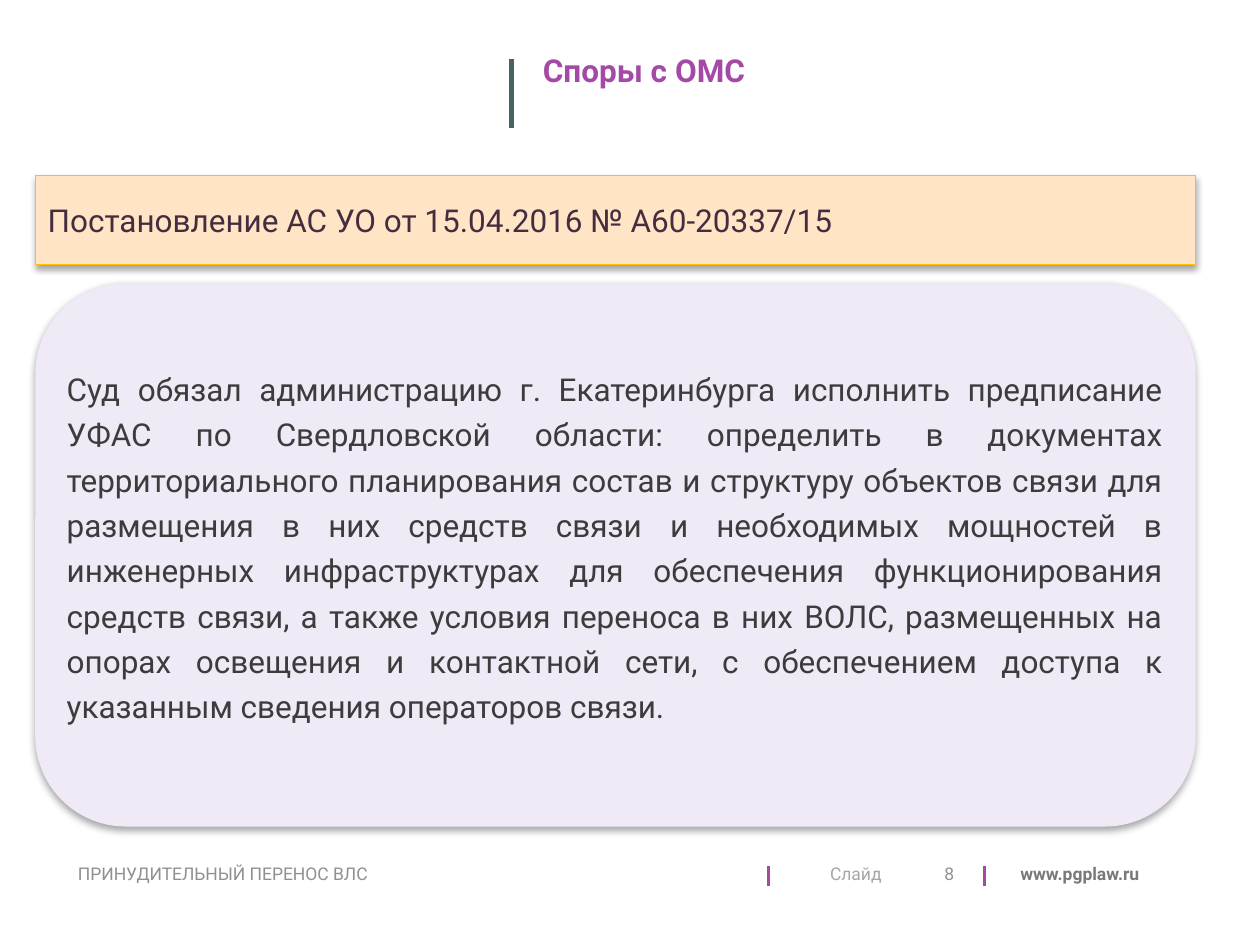
from pptx import Presentation
from pptx.dml.color import RGBColor
from pptx.enum.shapes import MSO_CONNECTOR, MSO_SHAPE
from pptx.enum.text import MSO_ANCHOR, PP_ALIGN
from pptx.oxml import parse_xml
from pptx.oxml.ns import nsdecls
from pptx.util import Inches, Pt

RECT, ROUNDED = MSO_SHAPE.RECTANGLE, MSO_SHAPE.ROUNDED_RECTANGLE
STRAIGHT = MSO_CONNECTOR.STRAIGHT
TOP, MIDDLE = MSO_ANCHOR.TOP, MSO_ANCHOR.MIDDLE
LEFT, RIGHT, JUSTIFY = PP_ALIGN.LEFT, PP_ALIGN.RIGHT, PP_ALIGN.JUSTIFY

FONT = "Roboto"
COLORS = {
    "purple": "A44AA6", "teal": "486364", "cream": "FFE5C5", "gold": "FFC000",
    "lilac": "F0EAF6", "plum": "432D3F", "body": "3C3C3C", "footer": "938E92",
    "label": "A6A6A6", "number": "948F93", "site": "797979", "shadow": "000000",
}

# Column and row lines of the slide, in inches
PANEL_LEFT, PANEL_WIDTH = 0.28, 9.21
FOOTER_TOP, FOOTER_HEIGHT = 6.78, 0.31

RULING = "Постановление АС УО от 15.04.2016 № А60-20337/15"
SUMMARY = (
    "Суд обязал администрацию г. Екатеринбурга исполнить предписание УФАС "
    "по Свердловской области: определить в документах территориального "
    "планирования состав и структуру объектов связи для размещения в них "
    "средств связи и необходимых мощностей в инженерных инфраструктурах для "
    "обеспечения функционирования средств связи, а также условия переноса в "
    "них ВОЛС, размещенных на опорах освещения и контактной сети, с "
    "обеспечением доступа к указанным сведения операторов связи."
)


def rgb(name):
    return RGBColor.from_string(COLORS[name])


def set_text(shape, text, color, size=18, bold=False, align=LEFT, anchor=MIDDLE):
    tf = shape.text_frame
    tf.word_wrap = True
    tf.vertical_anchor = anchor
    tf.text = text
    p = tf.paragraphs[0]
    p.alignment = align
    font = p.runs[0].font
    font.name, font.size, font.bold = FONT, Pt(size), bold
    font.color.rgb = rgb(color)
    return tf


def add_text(s, box, text, color, **style):
    return set_text(s.shapes.add_textbox(*map(Inches, box)), text, color, **style)


def add_footer_text(s, left, width, text, color, **style):
    box = (left, FOOTER_TOP, width, FOOTER_HEIGHT)
    add_text(s, box, text, color, size=10, **style)


def add_bar(s, x, top, bottom, color, width):
    line = s.shapes.add_connector(
        STRAIGHT, Inches(x), Inches(top), Inches(x), Inches(bottom))
    line.line.color.rgb = rgb(color)
    line.line.width = Pt(width)
    line._element.spPr.append(parse_xml(f"<a:effectLst {nsdecls('a')}/>"))


def add_panel(s, kind, top, height, fill, outline=None):
    """Add a full-width filled shape with a soft shadow below it."""
    panel = s.shapes.add_shape(
        kind, *map(Inches, (PANEL_LEFT, top, PANEL_WIDTH, height)))
    panel.fill.solid()
    panel.fill.fore_color.rgb = rgb(fill)
    if outline:
        panel.line.color.rgb = rgb(outline)
        panel.line.width = Pt(0.75)
    else:
        panel.line.fill.background()
    panel._element.spPr.append(parse_xml(
        f"<a:effectLst {nsdecls('a')}>"
        f'<a:outerShdw blurRad="{Pt(4)}" dist="{Pt(2)}" dir="5400000" rotWithShape="0">'
        f'<a:srgbClr val="{COLORS["shadow"]}"><a:alpha val="35000"/></a:srgbClr>'
        "</a:outerShdw></a:effectLst>"))
    return panel


def add_title(s):
    add_bar(s, 4.06, 0.47, 1.02, "teal", 2.5)
    add_text(s, (4.21, 0.36, 5.28, 0.87), "Споры с ОМС", "purple",
             bold=True, anchor=TOP)


def add_summary(s):
    add_panel(s, ROUNDED, 2.25, 4.31, "lilac")
    tf = add_text(s, (0.46, 2.46, 8.84, 3.89), SUMMARY, "body", align=JUSTIFY)
    tf.margin_left = tf.margin_right = tf.margin_top = Inches(0.07)
    tf.margin_bottom = Inches(0.25)
    tf.paragraphs[0].line_spacing = 1.2


def add_footer(s):
    add_footer_text(s, 0.52, 5.39, "ПРИНУДИТЕЛЬНЫЙ ПЕРЕНОС ВЛС", "footer")
    add_footer_text(s, 6.49, 0.8, "Слайд", "label")
    add_footer_text(s, 6.42, 1.25, "8", "number", align=RIGHT)
    add_footer_text(s, 7.9, 1.24, "www.pgplaw.ru", "site", bold=True, align=RIGHT)
    for x in (6.1, 7.81):
        add_bar(s, x, 6.87, 7.03, "purple", 1.75)


def main():
    prs = Presentation()
    prs.slide_width, prs.slide_height = Inches(10), Inches(7.5)
    s = prs.slides.add_slide(prs.slide_layouts[6])
    add_title(s)
    set_text(add_panel(s, RECT, 1.39, 0.71, "cream", "gold"), RULING, "plum")
    add_summary(s)
    add_footer(s)
    prs.save("out.pptx")


if __name__ == "__main__":
    main()
